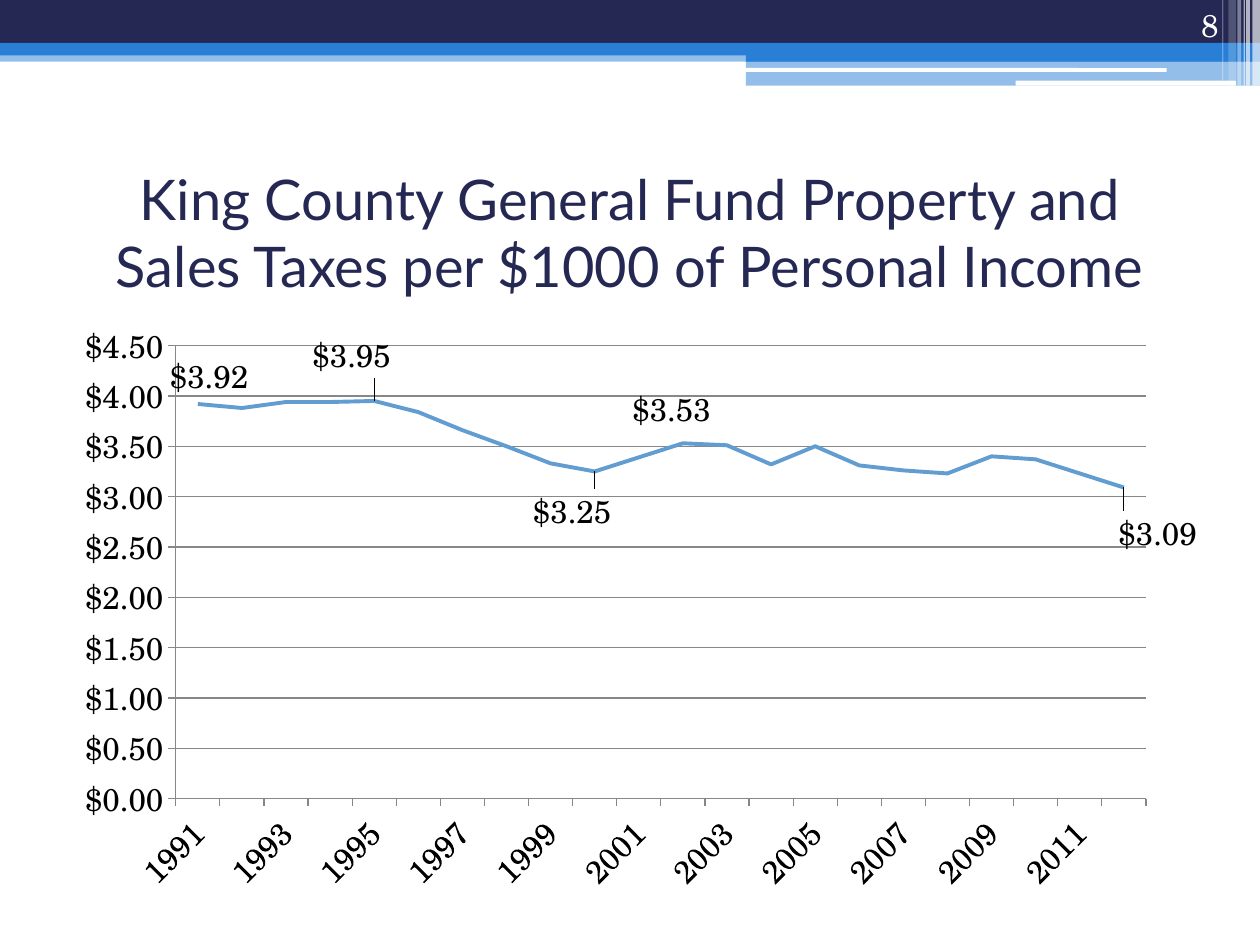
from lxml import etree
from pptx import Presentation
from pptx import util as u
from pptx.chart import data as cd
from pptx.dml import color
from pptx.enum import chart as ch, shapes, text
from pptx.oxml import parse_xml
from pptx.oxml.ns import qn

NAVY, BLUE, WHITE = "242852", "297FD5", "FFFFFF"
SERIF = "TeX Gyre Schola"
MONEY = '"$"#,##0.00'
C_NS = 'xmlns:c="http://schemas.openxmlformats.org/drawingml/2006/chart"'

BARS = [
    (0, 0.4, 10, 0.09, BLUE, 50),
    (0, 0, 10, 0.34, NAVY, 100),
    (0, 0.34, 10, 0.1, BLUE, 100),
    (5.92, 0.39, 4.08, 0.1, BLUE, 100),
    (5.92, 0.48, 4.08, 0.2, BLUE, 50),
]
PILLS = [(5.91, 0.54, 3.35, 0.03), (8.06, 0.64, 1.75, 0.04)]
STRIPES = [
    (9.94, 0.06, 0.68, 65),
    (9.89, 0.03, 0.68, 65),
    (9.87, 0.01, 0.68, 60),
    (9.82, 0.03, 0.68, 40),
    (9.75, 0.06, 0.64, 20),
    (9.7, 0.01, 0.64, 30),
]
TAXES = [3.92, 3.88, 3.94, 3.94, 3.95, 3.84, 3.66, 3.5, 3.33, 3.25, 3.39,
         3.53, 3.51, 3.32, 3.5, 3.31, 3.26, 3.23, 3.4, 3.37, 3.23, 3.09]
ABOVE, BELOW = ch.XL_LABEL_POSITION.ABOVE, ch.XL_LABEL_POSITION.BELOW
LABELS = {
    0: (ABOVE, 0.01, 0),
    4: (ABOVE, -0.02, -0.03),
    9: (BELOW, -0.02, 0.02),
    11: (ABOVE, -0.01, -0.01),
    21: (BELOW, 0.03, 0.03),
}


def rgb(value):
    return color.RGBColor.from_string(value)


def inches(box):
    return [u.Inches(v) for v in box]


def set_font(font, name, size, value):
    font.name, font.size = name, u.Pt(size)
    font.color.rgb = rgb(value)


def add_bar(s, box, value, alpha=100, kind=shapes.MSO_SHAPE.RECTANGLE):
    sp = s.shapes.add_shape(kind, *inches(box))
    sp.shadow.inherit = False
    sp.fill.solid()
    sp.fill.fore_color.rgb = rgb(value)
    sp.line.fill.background()
    if alpha < 100:
        clr = sp.fill._xPr.find(".//" + qn("a:srgbClr"))
        etree.SubElement(clr, qn("a:alpha")).set("val", str(alpha * 1000))


def add_banner(s):
    for *box, value, alpha in BARS:
        add_bar(s, box, value, alpha)
    for box in PILLS:
        add_bar(s, box, WHITE, kind=shapes.MSO_SHAPE.ROUNDED_RECTANGLE)
    for x, w, h, alpha in STRIPES:
        add_bar(s, (x, 0, w, h), WHITE, alpha)


def add_text(sp, box, words, anchor, align, font):
    sp.left, sp.top, sp.width, sp.height = inches(box)
    tf = sp.text_frame
    tf.text = words
    tf.word_wrap = True
    tf.auto_size = text.MSO_AUTO_SIZE.NONE
    tf.vertical_anchor = anchor
    p = tf.paragraphs[0]
    p.alignment = align
    set_font(p.runs[0].font, *font)


def layout_xml(x, y, size=None):
    inner = '<c:layoutTarget val="inner"/><c:xMode val="edge"/><c:yMode val="edge"/>' if size else ""
    extent = f'<c:w val="{size[0]}"/><c:h val="{size[1]}"/>' if size else ""
    return parse_xml(f'<c:layout {C_NS}><c:manualLayout>{inner}<c:x val="{x}"/>'
                     f'<c:y val="{y}"/>{extent}</c:manualLayout></c:layout>')


def format_axes(chart):
    cat, val = chart.category_axis, chart.value_axis
    for axis in (cat, val):
        axis.major_tick_mark = ch.XL_TICK_MARK.OUTSIDE
        axis.minor_tick_mark = ch.XL_TICK_MARK.NONE
        set_font(axis.tick_labels.font, SERIF, 18, "000000")
    val.minimum_scale, val.maximum_scale, val.major_unit = 0, 4.5, 0.5
    val.tick_labels.number_format = MONEY
    val.tick_labels.number_format_is_linked = False
    val.has_major_gridlines = True
    for line in (cat.format.line, val.format.line, val.major_gridlines.format.line):
        line.color.rgb = rgb("878787")
        line.width = u.Pt(0.75)
    cat._element.find(".//" + qn("a:bodyPr")).set("rot", "-2700000")
    skip = parse_xml(f'<c:tickLblSkip {C_NS} val="2"/>')
    cat._element.find(qn("c:noMultiLvlLbl")).addprevious(skip)


def add_tax_chart(s, box):
    data = cd.CategoryChartData(number_format=MONEY)
    data.categories = [str(year) for year in range(1991, 2013)]
    data.add_series("Series 1", TAXES)
    chart = s.shapes.add_chart(ch.XL_CHART_TYPE.LINE, *inches(box), data).chart
    chart.has_legend = chart.has_title = False
    set_font(chart.font, SERIF, 18, "000000")
    format_axes(chart)
    area = chart._chartSpace.chart.plotArea
    for old in area.findall(qn("c:layout")):
        area.remove(old)
    area.insert(0, layout_xml(0.1, 0.06, (0.86, 0.76)))

    plot = chart.plots[0]
    plot.vary_by_categories = False
    ser = plot.series[0]
    ser.smooth = False
    ser.marker.style = ch.XL_MARKER_STYLE.NONE
    ser.format.line.color.rgb = rgb("629DD1")
    ser.format.line.width = u.Pt(2.25)
    ser.data_labels.show_value = False
    for i, (position, dx, dy) in LABELS.items():
        label = ser.points[i].data_label
        set_font(label.font, SERIF, 18, "000000")
        label.position = position
        idx = ser._element.find(f'.//{qn("c:dLbl")}/{qn("c:idx")}[@val="{i}"]')
        idx.addnext(layout_xml(dx, dy))


def main():
    prs = Presentation()
    prs.slide_width, prs.slide_height = u.Inches(10), u.Inches(7.5)
    s = prs.slides.add_slide(prs.slide_layouts[5])
    add_banner(s)
    add_text(s.shapes.title, (0.5, 1.25, 9, 1.17),
             "King County General Fund Property and Sales Taxes per $1000 of Personal Income",
             text.MSO_ANCHOR.MIDDLE, text.PP_ALIGN.CENTER, ("Lato", 32, NAVY))
    add_tax_chart(s, (0.5, 2.46, 9, 4.73))
    number = (8.94, 0, 0.83, 0.4)
    add_text(s.shapes.add_textbox(*inches(number)), number, "8",
             text.MSO_ANCHOR.BOTTOM, text.PP_ALIGN.RIGHT, (SERIF, 18, WHITE))
    prs.save("out.pptx")


if __name__ == "__main__":
    main()
